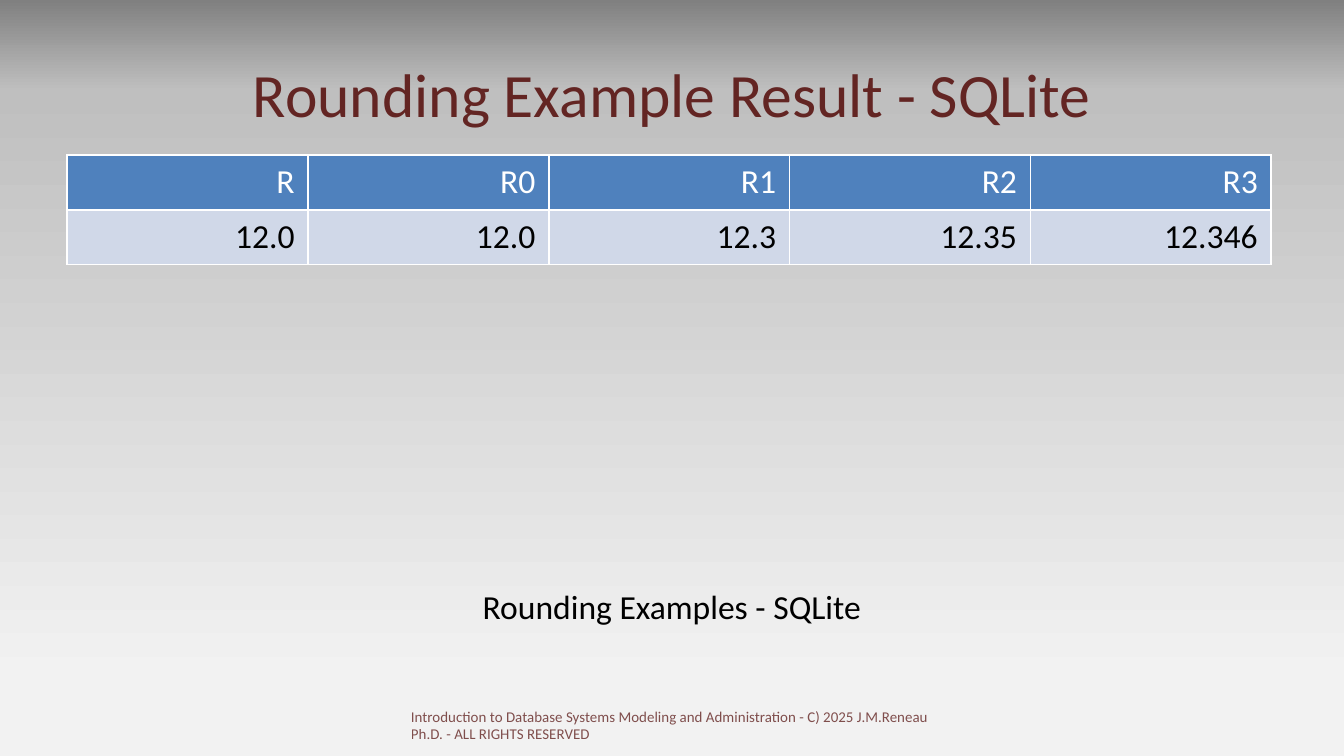
import copy

import pptx
import pptx.dml.color
import pptx.enum.text
import pptx.oxml
import pptx.oxml.ns
import pptx.util

ALIGN = pptx.enum.text.PP_ALIGN
ANCHOR = pptx.enum.text.MSO_ANCHOR
MAROON, WHITE, BLACK = "632523", "FFFFFF", "000000"


def color(hex_string):
    return pptx.dml.color.RGBColor.from_string(hex_string)


def write(frame, text, size=18, ink=BLACK, opacity=100, align=ALIGN.CENTER, anchor=ANCHOR.TOP):
    frame.word_wrap = True
    frame.vertical_anchor = anchor
    paragraph = frame.paragraphs[0]
    paragraph.alignment = align
    run = paragraph.add_run()
    run.text = text
    run.font.name = "Calibri"
    run.font.size = pptx.util.Pt(size)
    run.font.color.rgb = color(ink)
    if opacity < 100:
        ink_element = run._r.find(".//" + pptx.oxml.ns.qn("a:srgbClr"))
        ink_element.append(pptx.oxml.parse_xml(
            f'<a:alpha {pptx.oxml.ns.nsdecls("a")} val="{opacity * 1000}"/>'))


# A 16:9 slide on a grid of 100 columns and 100 rows
presentation = pptx.Presentation()
presentation.slide_width = pptx.util.Inches(10)
presentation.slide_height = presentation.slide_width * 9 // 16
slide = presentation.slides.add_slide(presentation.slide_layouts[6])
grid_column = presentation.slide_width / 100
grid_row = presentation.slide_height / 100

# Background: grey gradient from top to bottom
background = slide.background.fill
background.gradient()
background.gradient_angle = 270
stop_list = slide.element.find(".//" + pptx.oxml.ns.qn("a:gsLst"))
stop_list.append(copy.deepcopy(stop_list[-1]))
shades = [(0, "808080"), (0.12, "BFBFBF"), (0.9, "F2F2F2")]
for stop, (position, shade) in zip(background.gradient_stops, shades):
    stop.position = position
    stop.color.rgb = color(shade)

# Results table
rows = [
    (["R", "R0", "R1", "R2", "R3"], "4F81BD", WHITE),
    (["12.0", "12.0", "12.3", "12.35", "12.346"], "D0D8E8", BLACK),
]
columns = len(rows[0][0])
column_width, row_height = int(17.92 * grid_column), int(7.25 * grid_row)
table = slide.shapes.add_table(
    len(rows), columns, int(5 * grid_column), int(20.5 * grid_row),
    column_width * columns, row_height * len(rows)).table
for row_index, (values, fill, ink) in enumerate(rows):
    for column_index, value in enumerate(values):
        cell = table.cell(row_index, column_index)
        write(cell.text_frame, value, ink=ink, align=ALIGN.RIGHT)
        cell.fill.solid()
        cell.fill.fore_color.rgb = color(fill)
        properties = cell._tc.get_or_add_tcPr()
        for position, side in enumerate(["lnL", "lnR", "lnT", "lnB"]):
            properties.insert(position, pptx.oxml.parse_xml(
                f'<a:{side} {pptx.oxml.ns.nsdecls("a")} w="12700"><a:solidFill>'
                f'<a:srgbClr val="{WHITE}"/></a:solidFill></a:{side}>'))

# Title, caption and footer: left, top, width, height, text, format
texts = [
    (5, 4, 90, 16.67, "Rounding Example Result - SQLite",
     dict(size=33, ink=MAROON, anchor=ANCHOR.MIDDLE)),
    (5, 76.6, 90, 10, "Rounding Examples - SQLite", {}),
    (29.6, 92.67, 40.6, 5.33,
     "Introduction to Database Systems Modeling and Administration"
     " - C) 2025 J.M.Reneau Ph.D. - ALL RIGHTS RESERVED",
     dict(size=8, ink=MAROON, opacity=80, align=ALIGN.LEFT)),
]
for left, top, width, height, text, text_format in texts:
    box = slide.shapes.add_textbox(
        int(left * grid_column), int(top * grid_row),
        int(width * grid_column), int(height * grid_row))
    write(box.text_frame, text, **text_format)

presentation.save("out.pptx")
